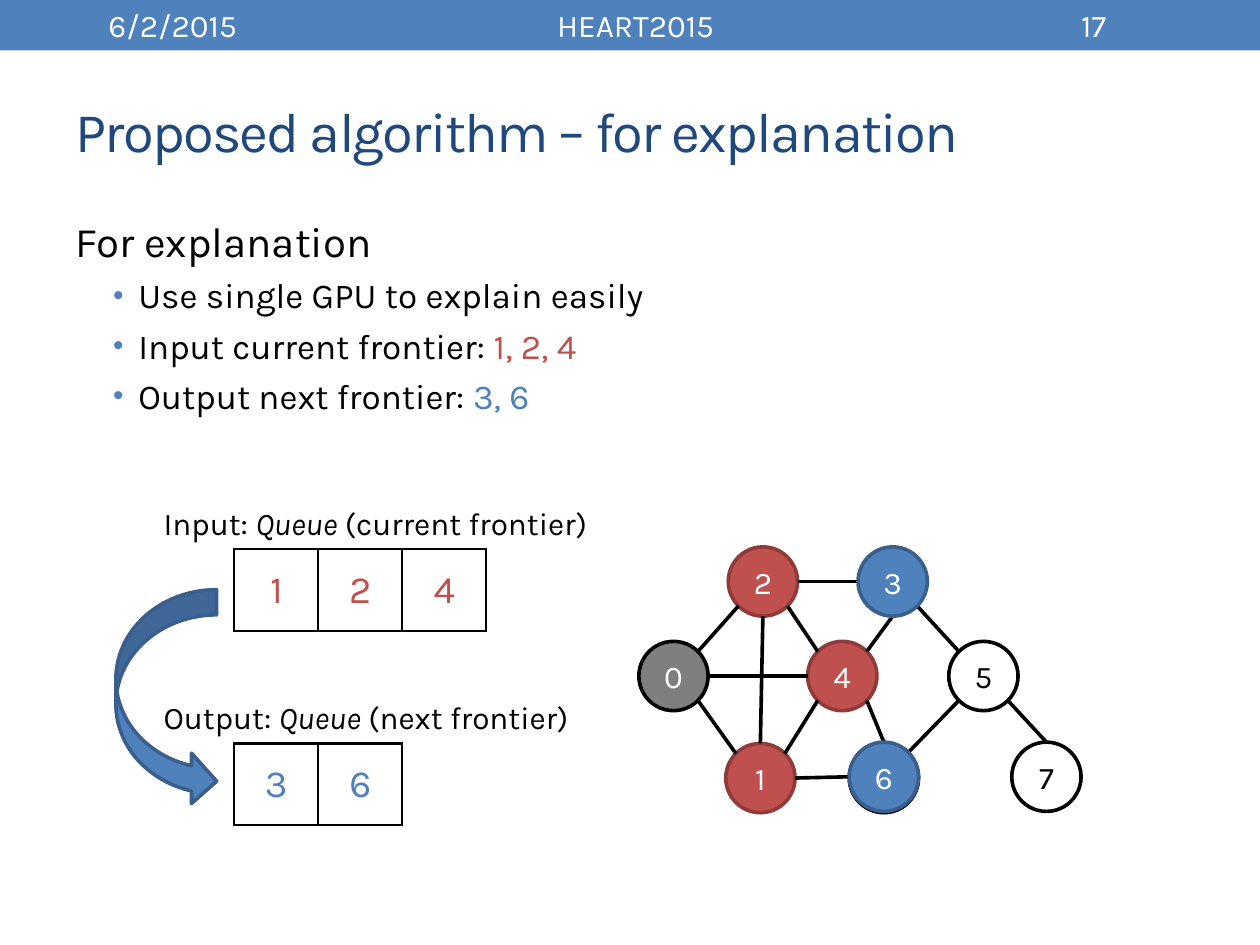
from math import cos, radians, sin

from lxml.etree import SubElement
from pptx import Presentation
from pptx.dml.color import RGBColor
from pptx.enum.shapes import MSO_CONNECTOR, MSO_SHAPE
from pptx.enum.text import MSO_ANCHOR, PP_ALIGN
from pptx.oxml.ns import qn
from pptx.util import Inches, Pt

FONT = "Karla"
BLACK, WHITE, GRAY, NAVY = "000000", "FFFFFF", "7F7F7F", "1F497D"
BLUE, DARK_BLUE, RED, DARK_RED = "4F81BD", "3A5F8C", "C0504D", "8E3B39"
LINE_WIDTH = 2.08
NODE_SIZE = 0.55
ANGLES = {"right": 0, "bottom right": 45, "bottom": 90, "bottom left": 135,
          "left": 180, "top left": 225, "top": 270, "top right": 315}


def color(value):
    """Turn a hex string into a colour."""
    return RGBColor.from_string(value)


def style_span(span, size, ink, italic=False):
    """Set the font of one run."""
    span.font.name = FONT
    span.font.size = Pt(size)
    span.font.color.rgb = color(ink)
    if italic:
        span.font.italic = True


def fill_para(para, spans, size, align=PP_ALIGN.LEFT):
    """Write (text, colour, italic) spans into a paragraph."""
    para.alignment = align
    for text, ink, italic in spans:
        span = para.add_run()
        span.text = text
        style_span(span, size, ink, italic)


def add_text(page, box, spans, size, align=PP_ALIGN.LEFT, anchor=MSO_ANCHOR.TOP, wrap=True):
    """Add a text box with one paragraph and return the paragraph."""
    frame = page.shapes.add_textbox(*map(Inches, box)).text_frame
    frame.word_wrap = wrap
    frame.vertical_anchor = anchor
    fill_para(frame.paragraphs[0], spans, size, align)
    return frame.paragraphs[0]


def add_shape(page, kind, box, fill, line=None):
    """Add a flat preset shape."""
    shape = page.shapes.add_shape(kind, *map(Inches, box))
    shape.shadow.inherit = False
    shape.fill.solid()
    shape.fill.fore_color.rgb = color(fill)
    if line:
        shape.line.color.rgb = color(line)
        shape.line.width = Pt(LINE_WIDTH)
    else:
        shape.line.fill.background()
    return shape


def add_header(page, left, top, width, height):
    """Add the bar with date, event and page number."""
    add_shape(page, MSO_SHAPE.RECTANGLE, (left, top, width, height), BLUE)
    for text, offset, span_width in (("6/2/2015", 0.5, 1.74), ("HEART2015", 2.33, 5.43),
                                     ("17", 7.86, 1.64)):
        add_text(page, (left + offset, top + 0.02, span_width, height - 0.04),
                 [(text, WHITE, False)], 18, PP_ALIGN.CENTER, MSO_ANCHOR.MIDDLE)


def add_title(page, *box):
    """Add the slide title with slightly tightened letters."""
    para = add_text(page, box, [("Proposed algorithm – for explanation", NAVY, False)],
                    32, anchor=MSO_ANCHOR.MIDDLE)
    para.runs[0].font._element.set("spc", "-100")


def add_bullet(para):
    """Indent a paragraph and give it a blue bullet."""
    props = para._p.get_or_add_pPr()
    props.set("marL", str(Inches(0.5)))
    props.set("indent", str(Inches(-0.2)))
    SubElement(SubElement(props, qn("a:buClr")), qn("a:srgbClr")).set("val", BLUE)
    SubElement(props, qn("a:buSzPct")).set("val", "85000")
    SubElement(props, qn("a:buFont")).set("typeface", "Arial")
    SubElement(props, qn("a:buChar")).set("char", "•")


def add_body(page, *box):
    """Add the heading line and its bullets."""
    heading = add_text(page, box, [("For explanation", BLACK, False)], 24)
    heading.space_before = Pt(5.6)
    for text, values, ink in (("Use single GPU to explain easily", "", BLACK),
                              ("Input current frontier: ", "1, 2, 4", RED),
                              ("Output next frontier: ", "3, 6", BLUE)):
        para = heading._parent.add_paragraph()
        spans = [(text, BLACK, False), (values, ink, False)]
        fill_para(para, [span for span in spans if span[0]], 20)
        para.space_before = Pt(4.7)
        add_bullet(para)


def add_borders(cell):
    """Draw a black line on each side of a cell."""
    props = cell._tc.get_or_add_tcPr()
    for index, side in enumerate(("a:lnL", "a:lnR", "a:lnT", "a:lnB")):
        border = props.makeelement(qn(side), {"w": str(Pt(1.5))})
        fill = SubElement(border, qn("a:solidFill"))
        SubElement(fill, qn("a:srgbClr")).set("val", BLACK)
        props.insert(index, border)


def add_queue(page, left, top, label, label_width, note, values, ink):
    """Add a queue label and the row of its values."""
    add_text(page, (left, top, label_width, 0.4),
             [(label, BLACK, False), ("Queue", BLACK, True), (note, BLACK, False)], 18, wrap=False)
    cell_width = 2 / 3
    table = page.shapes.add_table(1, len(values), Inches(left + 0.66), Inches(top + 0.41),
                                  Inches(cell_width * len(values)), Inches(0.65)).table
    table.first_row = table.horz_banding = False
    for column, value in enumerate(values):
        table.columns[column].width = Inches(cell_width)
        cell = table.cell(0, column)
        cell.fill.solid()
        cell.fill.fore_color.rgb = color(WHITE)
        cell.vertical_anchor = MSO_ANCHOR.MIDDLE
        fill_para(cell.text_frame.paragraphs[0], [(value, ink, False)], 22, PP_ALIGN.CENTER)
        add_borders(cell)


def add_node(page, left, top, label, fill, line, ink):
    """Add one round graph node."""
    node = add_shape(page, MSO_SHAPE.OVAL, (left, top, NODE_SIZE, NODE_SIZE), fill, line)
    frame = node.text_frame
    frame.vertical_anchor = MSO_ANCHOR.MIDDLE
    if label:
        fill_para(frame.paragraphs[0], [(label, ink, False)], 18, PP_ALIGN.CENTER)


def node_site(corner, side):
    """Return the point on a node's rim at the named side."""
    angle, radius = radians(ANGLES[side]), NODE_SIZE / 2
    return (Inches(corner[0] + radius * (1 + cos(angle))),
            Inches(corner[1] + radius * (1 + sin(angle))))


def add_graph(page, left, top):
    """Add the graph: plain and current nodes, edges, then next-frontier nodes."""
    offsets = {0: (0, 0.75), 1: (0.69, 1.56), 2: (0.71, 0), 3: (1.74, 0),
               4: (1.34, 0.75), 5: (2.46, 0.75), 6: (1.67, 1.55), 7: (2.96, 1.55)}
    corners = {key: (left + x, top + y) for key, (x, y) in offsets.items()}
    visited, current = (GRAY, BLACK, WHITE), (RED, DARK_RED, WHITE)
    following, unseen = (BLUE, DARK_BLUE, WHITE), (WHITE, BLACK, BLACK)
    for key, look in ((0, visited), (1, current), (4, current), (2, current),
                      (5, unseen), (7, unseen)):
        add_node(page, *corners[key], str(key), *look)
    add_node(page, corners[6][0], corners[6][1] + 0.01, "", *unseen)
    edges = ((2, "bottom left", 0, "top right"), (0, "bottom right", 1, "top left"),
             (2, "bottom right", 4, "top left"), (3, "bottom right", 5, "top left"),
             (4, "bottom right", 6, "top"), (1, "right", 6, "left"),
             (4, "bottom left", 1, "top right"), (0, "right", 4, "left"),
             (2, "bottom", 1, "top"), (2, "right", 3, "left"),
             (3, "bottom", 4, "top right"), (5, "bottom left", 6, "top right"),
             (5, "bottom right", 7, "top"))
    for start, start_side, end, end_side in edges:
        edge = page.shapes.add_connector(MSO_CONNECTOR.STRAIGHT,
                                         *node_site(corners[start], start_side),
                                         *node_site(corners[end], end_side))
        edge.line.color.rgb = color(BLACK)
        edge.line.width = Pt(LINE_WIDTH)
        SubElement(edge._element.spPr, qn("a:effectLst"))
    for key in (3, 6):
        add_node(page, *corners[key], str(key), *following)


def main():
    """Build and save the deck."""
    deck = Presentation()
    deck.slide_width, deck.slide_height = Inches(10), Inches(7.5)
    page = deck.slides.add_slide(deck.slide_layouts[6])
    add_header(page, 0, 0, 10, 0.4)
    add_title(page, 0.5, 0.49, 9, 1.08)
    add_body(page, 0.5, 1.66, 9, 1.99)
    add_graph(page, 5.07, 4.34)
    add_queue(page, 1.2, 3.95, "Input: ", 3.62, " (current frontier)", "124", RED)
    add_queue(page, 1.2, 5.49, "Output: ", 3.45, " (next frontier)", "36", BLUE)
    add_shape(page, MSO_SHAPE.CURVED_RIGHT_ARROW, (0.92, 4.68, 0.8, 1.72), BLUE, DARK_BLUE)
    deck.save("out.pptx")


if __name__ == "__main__":
    main()
